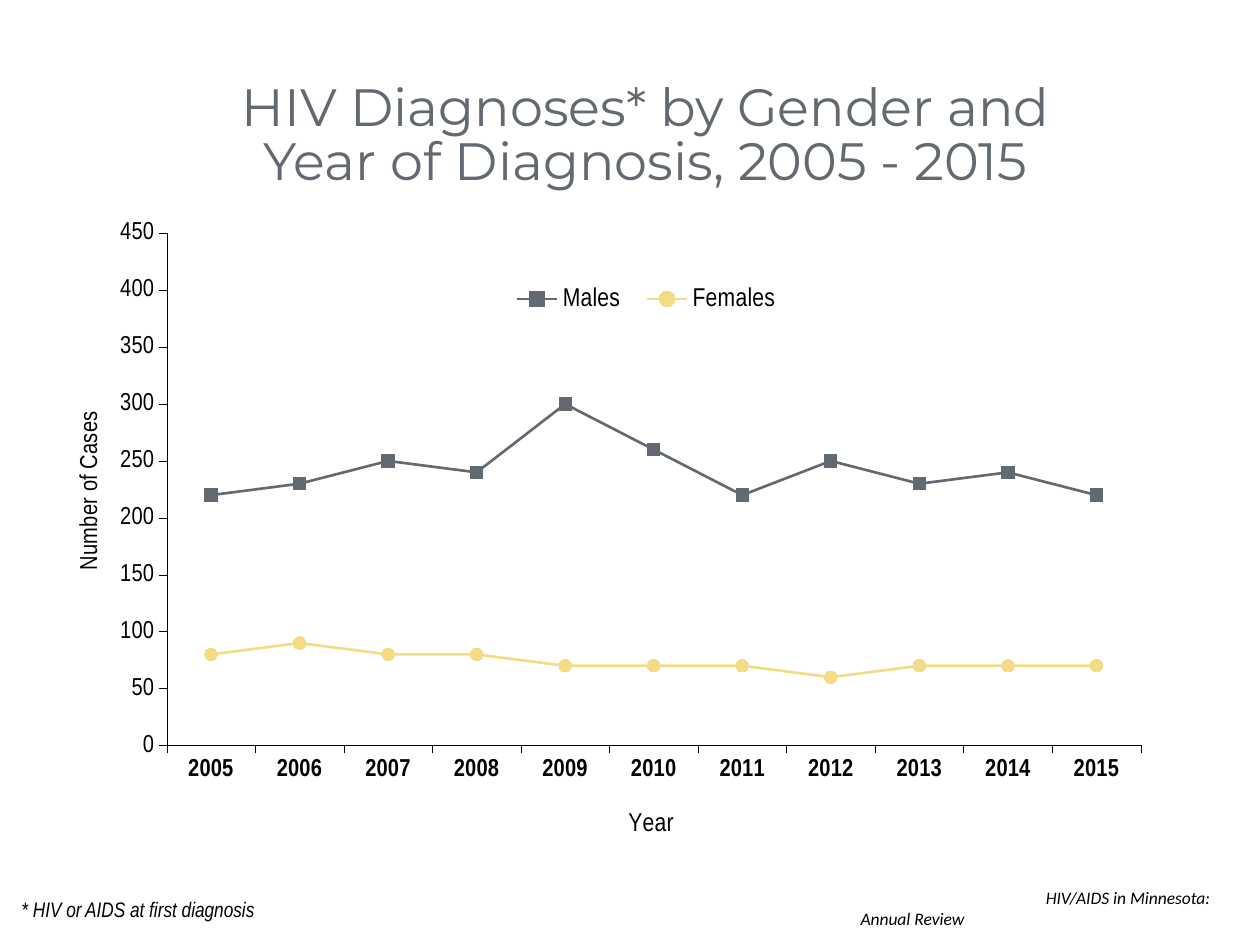
import pptx
import pptx.chart.data
import pptx.dml.color
import pptx.enum.chart
import pptx.enum.text
import pptx.oxml
import pptx.util
from pptx.util import Inches, Pt

THEME = {
    "slate": "626970", "yellow": "F3DC85", "black": "000000",
    "title_font": "Montserrat", "chart_font": "Arial Narrow", "source_font": "Calibri",
    "title": 30, "legend": 14.7, "axis": 14, "note": 12, "source": 10,
}

TITLE = "HIV Diagnoses* by Gender and\vYear of Diagnosis, 2005 - 2015"
FOOTNOTE = "* HIV or AIDS at first diagnosis"
SOURCE = "HIV/AIDS in Minnesota: Annual Review"
YEARS = [str(year) for year in range(2005, 2016)]
MARKERS = pptx.enum.chart.XL_MARKER_STYLE
SERIES = [
    ("Males", "slate", MARKERS.SQUARE,
     [220, 230, 250, 240, 300, 260, 220, 250, 230, 240, 220]),
    ("Females", "yellow", MARKERS.CIRCLE,
     [80, 90, 80, 80, 70, 70, 70, 60, 70, 70, 70]),
]
# Fractions of the chart frame: x, y and, where fixed, width, height
PLOT_AREA = (0.117, 0.054, 0.859, 0.75)
LEGEND_AREA = (0.41, 0.12, 0.26, 0.06)
YEAR_SPOT = (0.52, 0.89)
CASES_SPOT = (0.033, 0.308)


def rgb(name):
    return pptx.dml.color.RGBColor.from_string(THEME[name])


def style(font, face, size, color="black", bold=False, italic=False):
    font.name, font.size = THEME[face], Pt(THEME[size])
    font.bold, font.italic = bold, italic
    font.color.rgb = rgb(color)


def place(element, area, inner=False):
    """Fix a chart part at the given fractions of the chart frame."""
    qn = pptx.oxml.ns.qn
    layout = element.find(qn("c:layout"))
    if layout is None:
        layout = element.makeelement(qn("c:layout"))
        overlay = element.find(qn("c:overlay"))
        if overlay is None:
            element.insert(0, layout)
        else:
            overlay.addprevious(layout)
    manual = layout.makeelement(qn("c:manualLayout"))
    layout.append(manual)
    settings = [("layoutTarget", "inner")] if inner else []
    settings += [("xMode", "edge"), ("yMode", "edge")]
    settings += zip("xywh", area)
    for tag, value in settings:
        setting = manual.makeelement(qn("c:" + tag))
        setting.set("val", str(value))
        manual.append(setting)


def format_axis(axis, title, spot, title_size, bold):
    axis.has_major_gridlines = False
    axis.major_tick_mark = pptx.enum.chart.XL_TICK_MARK.OUTSIDE
    axis.minor_tick_mark = pptx.enum.chart.XL_TICK_MARK.NONE
    axis.format.line.color.rgb = rgb("black")
    axis.format.line.width = Pt(0.25)
    style(axis.tick_labels.font, "chart_font", "axis", bold=bold)
    heading = axis.axis_title.text_frame.paragraphs[0]
    heading.text = title
    style(heading.font, "chart_font", title_size)
    place(axis.axis_title._element, spot)


def add_cases_chart(slide):
    cases = pptx.chart.data.CategoryChartData()
    cases.categories = YEARS
    for name, _, _, values in SERIES:
        cases.add_series(name, values)
    chart = slide.shapes.add_chart(
        pptx.enum.chart.XL_CHART_TYPE.LINE_MARKERS,
        Inches(0.27), Inches(1.56), Inches(9), Inches(5.42), cases).chart
    chart.has_title = False
    style(chart.font, "chart_font", "axis")
    place(chart._chartSpace.chart.plotArea, PLOT_AREA, inner=True)

    for line, (_, color, marker, _) in zip(chart.plots[0].series, SERIES):
        line.smooth = False
        line.format.line.color.rgb = rgb(color)
        line.format.line.width = Pt(1.5)
        line.marker.style, line.marker.size = marker, 7
        line.marker.format.fill.solid()
        line.marker.format.fill.fore_color.rgb = rgb(color)
        line.marker.format.line.color.rgb = rgb(color)
    chart.plots[0].vary_by_categories = False

    format_axis(chart.category_axis, "Year", YEAR_SPOT, "legend", bold=True)
    format_axis(chart.value_axis, "Number of Cases", CASES_SPOT, "axis", bold=False)
    chart.value_axis.minimum_scale = 0
    chart.value_axis.maximum_scale = 450
    chart.value_axis.major_unit = 50

    chart.has_legend = True
    chart.legend.position = pptx.enum.chart.XL_LEGEND_POSITION.TOP
    chart.legend.include_in_layout = False
    style(chart.legend.font, "chart_font", "legend")
    place(chart.legend._element, LEGEND_AREA)


def add_title(slide):
    title = slide.shapes.title
    title.left, title.top = Inches(0.54), Inches(0.5)
    title.width, title.height = Inches(9.17), Inches(1.18)
    title.text_frame.text = TITLE
    title.text_frame.vertical_anchor = pptx.enum.text.MSO_ANCHOR.MIDDLE
    heading = title.text_frame.paragraphs[0]
    heading.alignment = pptx.enum.text.PP_ALIGN.CENTER
    heading.line_spacing = 0.85
    style(heading.font, "title_font", "title", "slate")


def add_note(slide, text, box, inset, face, size, wrap):
    frame = slide.shapes.add_textbox(*map(Inches, box)).text_frame
    frame.word_wrap = wrap
    frame.margin_left = frame.margin_right = Inches(inset)
    frame.margin_top = frame.margin_bottom = Inches(inset)
    note = frame.paragraphs[0]
    note.text = text
    style(note.font, face, size, italic=True)
    return frame


def main():
    deck = pptx.Presentation()
    deck.slide_width, deck.slide_height = Inches(10), Inches(7.5)
    slide = deck.slides.add_slide(deck.slide_layouts[5])
    add_cases_chart(slide)
    add_title(slide)

    footnote = add_note(slide, FOOTNOTE, (-0.03, 7.02, 2.75, 0.48), 0.2,
                        "chart_font", "note", wrap=False)
    footnote.vertical_anchor = pptx.enum.text.MSO_ANCHOR.MIDDLE
    footnote.paragraphs[0].line_spacing = 0.4

    source = add_note(slide, SOURCE, (6.83, 7.04, 3.17, 0.41), 0,
                      "source_font", "source", wrap=True)
    first_line_indent = Inches(1.47)
    source.paragraphs[0]._p.get_or_add_pPr().set("indent", str(first_line_indent))

    deck.save("out.pptx")


if __name__ == "__main__":
    main()
